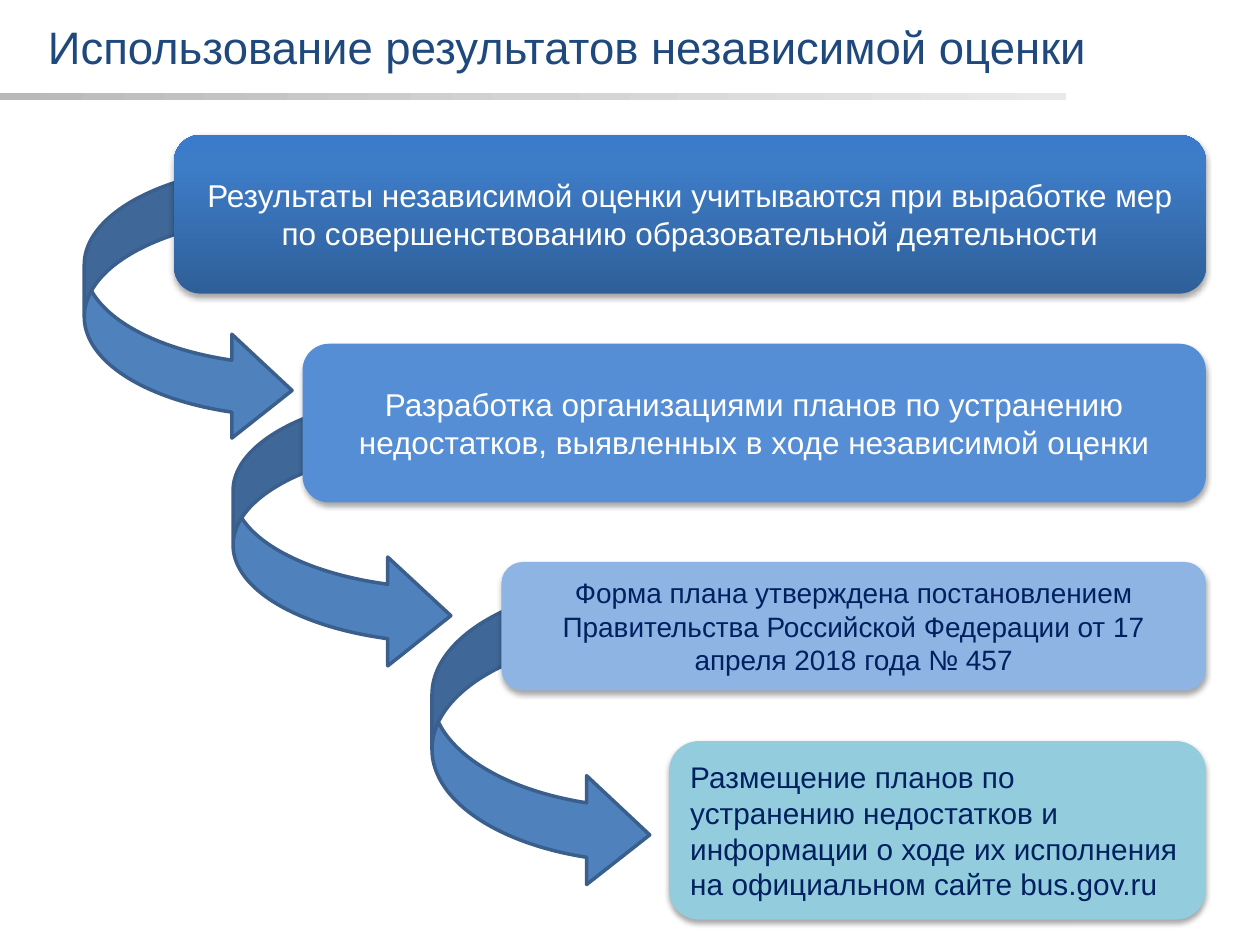
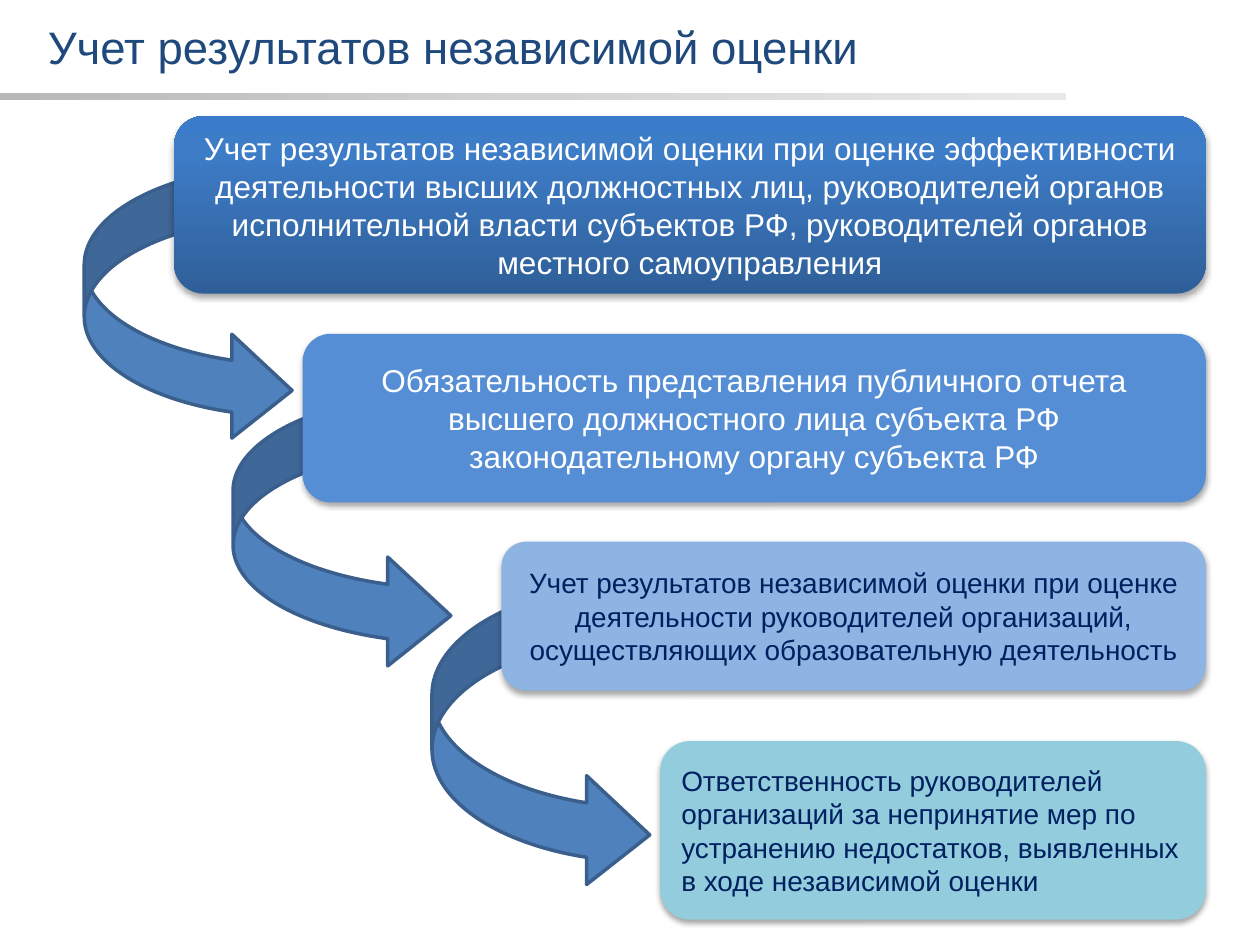
from lxml import etree
from pptx import Presentation
from pptx import util as u
from pptx.dml.color import RGBColor
from pptx.enum import shapes, text
from pptx.oxml import parse_xml
from pptx.oxml.ns import nsdecls, qn

COLORS = {
    "title": "1F497D", "light": "FFFFFF", "dark": "002060",
    "arrow": "4F81BD", "arrow_line": "3A5F8C",
    "step2": "558ED5", "step3": "8EB4E3", "step4": "93CDDD",
}
BAND_STOPS = [(0, "B8B8B8"), (50, "D3D3D3"), (100, "E9E9E9")]
STEP1_STOPS = [(0, "2F5F99"), (80, "3D7CC7"), (100, "3A7CCB")]

FONT = "Arial"
RIGHT = 24.31
BOTTOMS = [5.92, 10.13, 13.92, 18.54]
FILLS = [STEP1_STOPS, COLORS["step2"], COLORS["step3"], COLORS["step4"]]
TEXT_COLORS = ["light", "light", "dark", "dark"]
# left, top, width, height in cm of the arrow leading from each step to the next
ARROWS = [(1.7, 3.33, 4.19, 5.59), (4.7, 7.92, 4.39, 5.59), (8.71, 11.73, 4.39, 6.2)]

# title, then left, top, font size and wording of each step
SLIDES = [
    ("Использование результатов независимой оценки", [
        (3.51, 2.72, 18, "Результаты независимой оценки учитываются при выработке мер "
                         "по совершенствованию образовательной деятельности"),
        (6.1, 6.93, 18, "Разработка организациями планов по устранению недостатков, "
                        "выявленных в ходе независимой оценки"),
        (10.11, 11.33, 16, "Форма плана утверждена постановлением Правительства "
                           "Российской Федерации от 17 апреля 2018 года № 457"),
        (13.49, 14.94, 17, "Размещение планов по устранению недостатков и информации "
                           "о ходе их исполнения на официальном сайте bus.gov.ru"),
    ]),
    ("Учет результатов независимой оценки", [
        (3.51, 2.34, 18, "Учет результатов независимой оценки при оценке эффективности "
                         "деятельности высших должностных лиц, руководителей органов "
                         "исполнительной власти субъектов РФ, руководителей органов "
                         "местного самоуправления"),
        (6.1, 6.73, 18, "Обязательность представления публичного отчета высшего "
                        "должностного лица субъекта РФ законодательному органу субъекта РФ"),
        (10.11, 10.92, 16, "Учет результатов независимой оценки при оценке деятельности "
                           "руководителей организаций, осуществляющих образовательную "
                           "деятельность"),
        (13.31, 14.94, 16, "Ответственность руководителей организаций за непринятие мер по "
                           "устранению недостатков, выявленных в ходе независимой оценки"),
    ]),
]


def rgb(value):
    return RGBColor.from_string(value)


def write(sp, wording, size, color, align=text.PP_ALIGN.LEFT):
    tf = sp.text_frame
    tf.word_wrap = True
    tf.auto_size = text.MSO_AUTO_SIZE.NONE
    tf.vertical_anchor = text.MSO_ANCHOR.MIDDLE
    p = tf.paragraphs[0]
    p.alignment = align
    r = p.add_run()
    r.text = wording
    r.font.name = FONT
    r.font.size = u.Pt(size)
    r.font.color.rgb = rgb(COLORS[color])


def fill_gradient(sp, stops, angle):
    """Fill with (percent, colour) stops; the angle runs clockwise in degrees."""
    sp.fill.gradient()
    grad = sp.element.spPr.find(qn("a:gradFill"))
    stop_list = grad.find(qn("a:gsLst"))
    for old in list(stop_list):
        stop_list.remove(old)
    for percent, color in stops:
        gs = etree.SubElement(stop_list, qn("a:gs"), pos=str(percent * 1000))
        etree.SubElement(gs, qn("a:srgbClr"), val=color)
    grad.find(qn("a:lin")).set("ang", str(angle * 60000))


def add_shape(s, kind, box, fill, angle=0):
    """Add a shape without outline or shadow; a list as fill makes a gradient."""
    sp = s.shapes.add_shape(kind, *map(u.Cm, box))
    sp.shadow.inherit = False
    sp.line.fill.background()
    if isinstance(fill, list):
        fill_gradient(sp, fill, angle)
    else:
        sp.fill.solid()
        sp.fill.fore_color.rgb = rgb(fill)
    return sp


def add_soft_shadow(sp):
    effects = sp.element.spPr.find(qn("a:effectLst"))
    effects.append(parse_xml(
        f'<a:outerShdw {nsdecls("a")} blurRad="{u.Pt(3.1)}" dist="{u.Pt(1.8)}" '
        'dir="5400000" rotWithShape="0"><a:srgbClr val="000000">'
        '<a:alpha val="35000"/></a:srgbClr></a:outerShdw>'))


def add_heading(s, wording):
    title = s.shapes.title
    title.left, title.top, title.width, title.height = map(u.Cm, (0.71, -0.05, 24, 1.96))
    write(title, wording, 26, "title")
    add_shape(s, shapes.MSO_SHAPE.RECTANGLE, (0, 1.88, 21.49, 0.13), BAND_STOPS)


def add_arrow(s, box):
    sp = add_shape(s, shapes.MSO_SHAPE.CURVED_LEFT_ARROW, box, COLORS["arrow"])
    sp.element.spPr.find(qn("a:xfrm")).set("flipH", "1")
    sp.adjustments[2] = 0.29
    sp.line.color.rgb = rgb(COLORS["arrow_line"])
    sp.line.width = u.Pt(2)


def add_step(s, box, fill, wording, size, color, align):
    sp = add_shape(s, shapes.MSO_SHAPE.ROUNDED_RECTANGLE, box, fill, angle=270)
    add_soft_shadow(sp)
    write(sp, wording, size, color, align)


def add_cascade(s, steps):
    for i, (left, top, size, wording) in enumerate(steps):
        is_last = i == len(steps) - 1
        if not is_last:
            add_arrow(s, ARROWS[i])
        align = text.PP_ALIGN.LEFT if is_last else text.PP_ALIGN.CENTER
        box = (left, top, RIGHT - left, BOTTOMS[i] - top)
        add_step(s, box, FILLS[i], wording, size, TEXT_COLORS[i], align)


def main():
    prs = Presentation()
    prs.slide_width, prs.slide_height = u.Cm(25.4), u.Cm(19.05)
    for heading, steps in SLIDES:
        s = prs.slides.add_slide(prs.slide_layouts[5])
        add_heading(s, heading)
        add_cascade(s, steps)
    prs.save("out.pptx")


if __name__ == "__main__":
    main()
